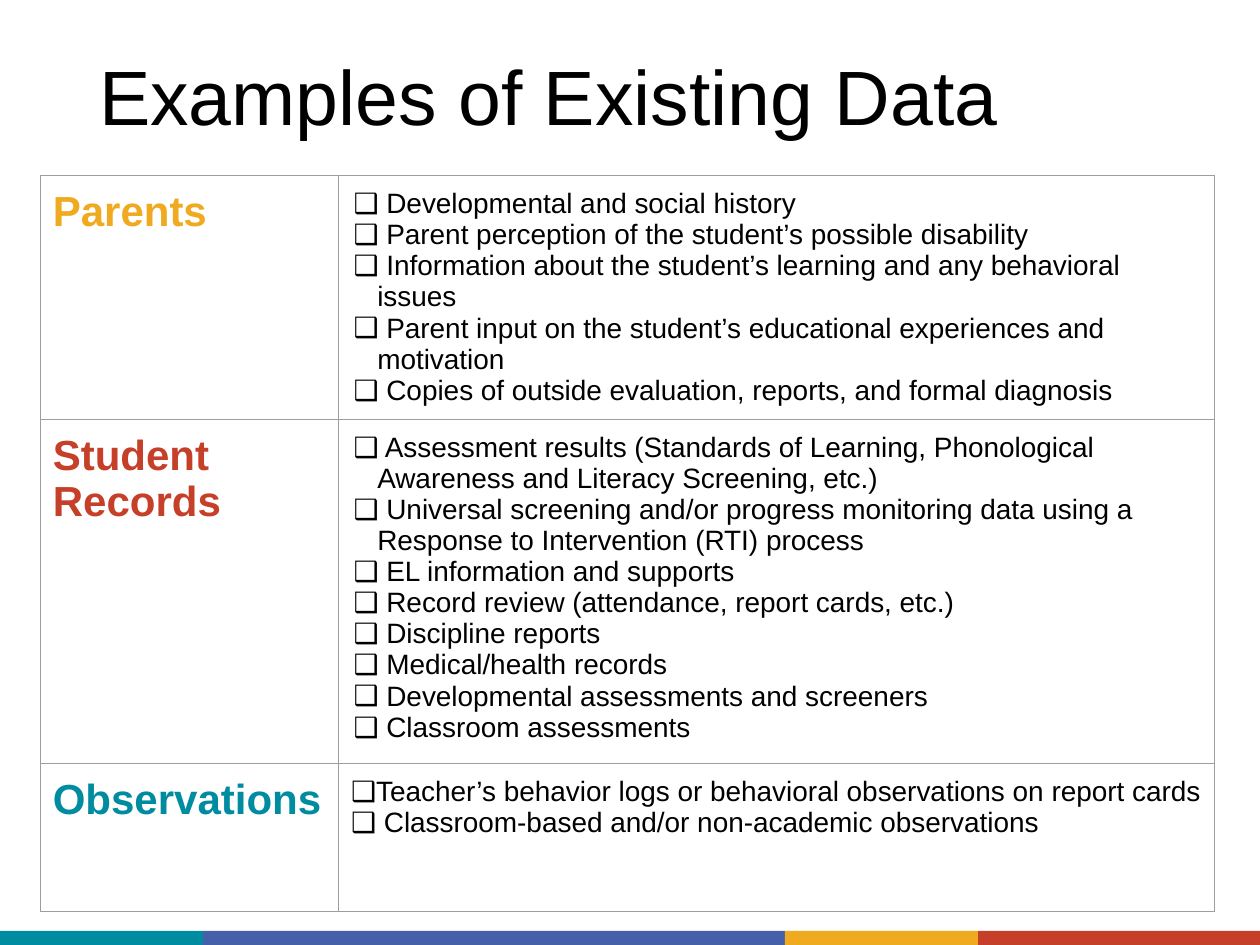
"""Build the slide listing examples of existing data by source."""
from lxml.etree import SubElement
from pptx import Presentation
from pptx.dml.color import RGBColor
from pptx.enum.shapes import MSO_SHAPE as SHAPE
from pptx.enum.text import MSO_ANCHOR as ANCHOR, PP_ALIGN as ALIGN
from pptx.oxml.ns import qn
from pptx.util import Pt

BLACK = RGBColor(0x00, 0x00, 0x00)
GOLD = RGBColor(0xEF, 0xAA, 0x1F)
RED = RGBColor(0xC6, 0x3F, 0x28)
TEAL = RGBColor(0x00, 0x8C, 0xA0)
BLUE = RGBColor(0x45, 0x5F, 0xA9)
GREY = RGBColor(0x9E, 0x9E, 0x9E)

WIDTH, HEIGHT = 720, 540
TITLE = "Examples of Existing Data"
BARS = [(TEAL, 116), (BLUE, 332.5), (GOLD, 110.5), (RED, 161)]
BAR_TOP = 532
COLUMNS = (170.5, 500.5)
ROWS = [
    ("Parents", GOLD, 139.2, 8.64, [
        " Developmental and social history",
        " Parent perception of the student’s possible disability",
        " Information about the student’s learning and any behavioral issues",
        " Parent input on the student’s educational experiences and motivation",
        " Copies of outside evaluation, reports, and formal diagnosis",
    ]),
    ("Student Records", RED, 196.8, 8.64, [
        " Assessment results (Standards of Learning, Phonological Awareness and Literacy Screening, etc.)",
        " Universal screening and/or progress monitoring data using a Response to Intervention (RTI) process",
        " EL information and supports",
        " Record review (attendance, report cards, etc.)",
        " Discipline reports",
        " Medical/health records",
        " Developmental assessments and screeners",
        " Classroom assessments",
    ]),
    ("Observations", TEAL, 84.4, 7.2, [
        "Teacher’s behavior logs or behavioral observations on report cards",
        " Classroom-based and/or non-academic observations",
    ]),
]


def write(tf, lines, size, color=BLACK, bold=False, bullet=None, spacing=1.0):
    tf.word_wrap = True
    for i, line in enumerate(lines):
        p = tf.paragraphs[0] if i == 0 else tf.add_paragraph()
        p.alignment = ALIGN.LEFT
        p.line_spacing = spacing
        p.space_before = Pt(0)
        if bullet:
            pPr = p._p.get_or_add_pPr()
            pPr.set("marL", str(Pt(13.5)))
            pPr.set("indent", str(-Pt(13.5)))
            SubElement(pPr, qn("a:buFont"), typeface="Arial")
            SubElement(pPr, qn("a:buChar"), char=bullet)
        r = p.add_run()
        r.text = line
        r.font.name = "Arial"
        r.font.size = Pt(size)
        r.font.bold = bold
        r.font.color.rgb = color


def format_cell(cell, side):
    cell.margin_left = cell.margin_right = Pt(side)
    cell.margin_top = cell.margin_bottom = Pt(7.2)
    cell.vertical_anchor = ANCHOR.TOP
    tcPr = cell._tc.get_or_add_tcPr()
    for edge in ("lnL", "lnR", "lnT", "lnB"):
        ln = SubElement(tcPr, qn(f"a:{edge}"), w=str(Pt(0.75)))
        SubElement(SubElement(ln, qn("a:solidFill")), qn("a:srgbClr"), val=str(GREY))
    cell.fill.background()


def add_bars(s):
    left = 0
    for color, width in BARS:
        sp = s.shapes.add_shape(SHAPE.RECTANGLE, Pt(left), Pt(BAR_TOP), Pt(width), Pt(HEIGHT - BAR_TOP))
        sp.shadow.inherit = False
        sp.fill.solid()
        sp.fill.fore_color.rgb = color
        sp.line.fill.background()
        left += width


def add_title(s):
    title = s.shapes.title
    title.left, title.top, title.width, title.height = Pt(49.5), Pt(28.8), Pt(621), Pt(57.6)
    title.text_frame.vertical_anchor = ANCHOR.MIDDLE
    write(title.text_frame, [TITLE], 44, spacing=0.9)


def add_sources(s):
    heights = [row[2] for row in ROWS]
    table = s.shapes.add_table(len(ROWS), len(COLUMNS), Pt(23), Pt(100.5),
                               Pt(sum(COLUMNS)), Pt(sum(heights))).table
    table.first_row = table.horz_banding = False
    for column, width in zip(table.columns, COLUMNS):
        column.width = Pt(width)
    for row, (source, color, height, side, items) in zip(table.rows, ROWS):
        row.height = Pt(height)
        label, details = row.cells
        format_cell(label, 7.2)
        format_cell(details, side)
        write(label.text_frame, [source], 24, color=color, bold=True)
        write(details.text_frame, items, 16, bullet="❑")


def main():
    prs = Presentation()
    prs.slide_width, prs.slide_height = Pt(WIDTH), Pt(HEIGHT)
    s = prs.slides.add_slide(prs.slide_layouts[5])
    add_bars(s)
    add_title(s)
    add_sources(s)
    prs.save("out.pptx")


if __name__ == "__main__":
    main()
